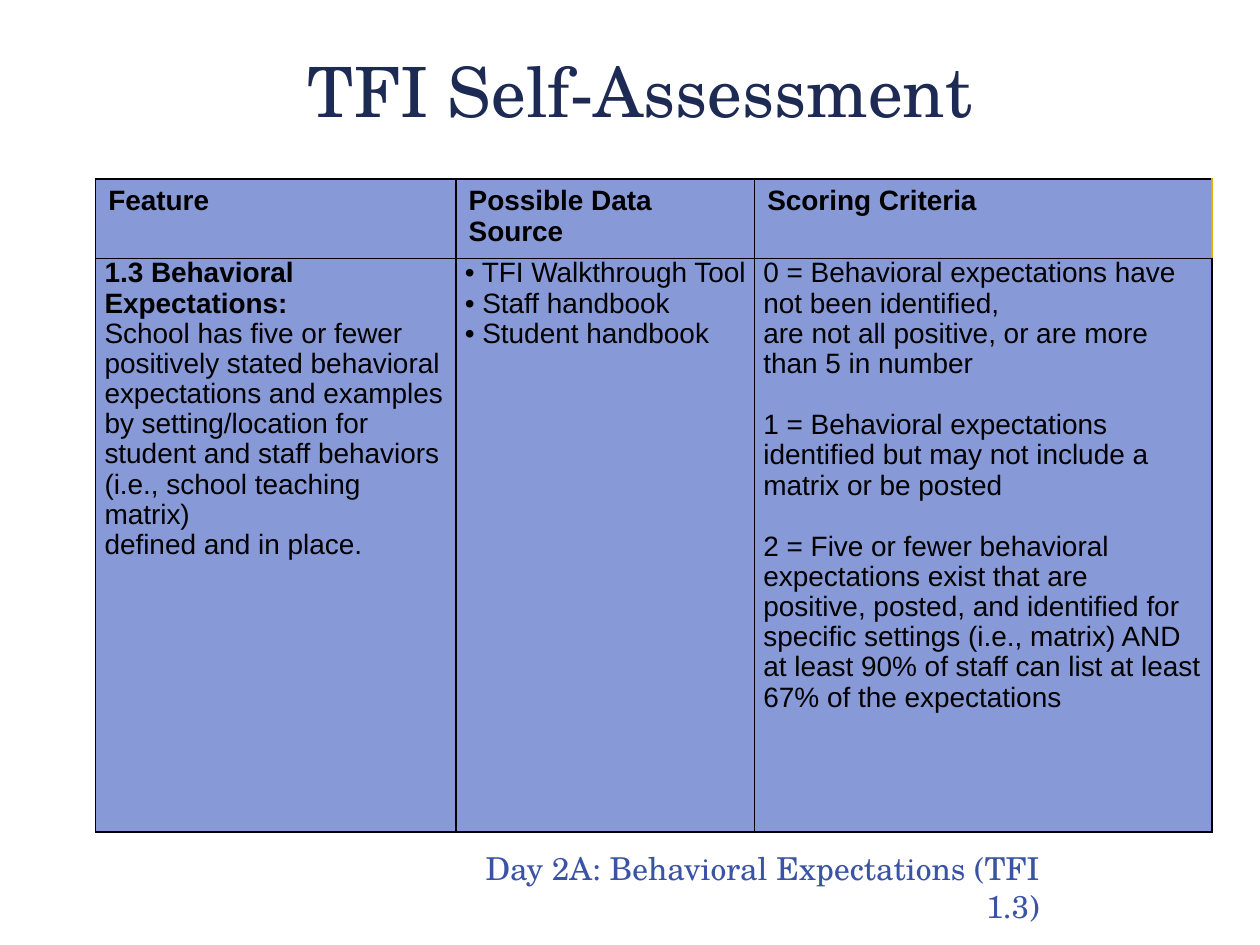
from lxml.etree import SubElement
from pptx import Presentation
from pptx.dml.color import RGBColor
from pptx.enum.text import MSO_ANCHOR, PP_ALIGN
from pptx.oxml.ns import qn
from pptx.util import Inches, Pt

NAVY = RGBColor(0x1D, 0x2A, 0x53)
BLUE = RGBColor(0x3A, 0x53, 0xA5)
PERIWINKLE = RGBColor(0x87, 0x99, 0xD7)
BLACK = RGBColor(0, 0, 0)
GOLD = RGBColor(0xE2, 0xAC, 0x00)
SERIF, SANS = "TeX Gyre Schola", "Arial"

COLUMN_WIDTHS = [2.86, 2.37, 3.63]
ROW_HEIGHTS = [0.57, 4.55]
HEADER_MARGINS = (0.1, 0.05)
BODY_MARGINS = (0.07, 0)
BODY_SPACING = 0.97
SCORE_GAP = Pt(17.8)

HEADINGS = ["Feature", "Possible Data Source", "Scoring Criteria"]
FEATURE = [
    "1.3 Behavioral Expectations:",
    "School has five or fewer positively stated behavioral",
    "expectations and examples by setting/location for",
    "student and staff behaviors (i.e., school teaching matrix)",
    "defined and in place.",
]
SOURCES = ["• TFI Walkthrough Tool", "• Staff handbook", "• Student handbook"]
CRITERIA = [
    "0 = Behavioral expectations have not been identified,",
    "are not all positive, or are more than 5 in number",
    "1 = Behavioral expectations identified but may not include a matrix or be posted",
    "2 = Five or fewer behavioral expectations exist that are",
    "positive, posted, and identified for specific settings (i.e., matrix) AND "
    "at least 90% of staff can list at least 67% of the expectations",
]


def set_all(target, values):
    for name, value in values.items():
        setattr(target, name, value)


def write(para, text, size, face, color, bold=False):
    span = para.add_run()
    span.text = text
    set_all(span.font, {"size": Pt(size), "name": face, "bold": bold})
    span.font.color.rgb = color


def place(shape, box):
    names = ("left", "top", "width", "height")
    set_all(shape, dict(zip(names, map(Inches, box))))


def add_title(page, box):
    title = page.shapes.title
    place(title, box)
    set_all(title.text_frame, {"vertical_anchor": MSO_ANCHOR.MIDDLE, "word_wrap": True})
    para = title.text_frame.paragraphs[0]
    para.alignment = PP_ALIGN.CENTER
    write(para, "TFI Self-Assessment", 39.6, SERIF, NAVY)


def add_footer(page, box):
    frame = page.shapes.add_textbox(*map(Inches, box)).text_frame
    frame.word_wrap = True
    para = frame.paragraphs[0]
    para.alignment = PP_ALIGN.RIGHT
    write(para, "Day 2A: Behavioral Expectations (TFI 1.3)", 18, SERIF, BLUE)


def add_borders(cell, right_color):
    """Draw 1 pt lines on all four sides; call before the cell is filled."""
    properties = cell._tc.get_or_add_tcPr()
    for side, color in zip("LRTB", (BLACK, right_color, BLACK, BLACK)):
        line = SubElement(properties, qn(f"a:ln{side}"), w=str(Pt(1)))
        fill = SubElement(line, qn("a:solidFill"))
        SubElement(fill, qn("a:srgbClr"), val=str(color))


def fill_cell(cell, lines, margins, right_color=BLACK, bold_first=False, spacing=None):
    add_borders(cell, right_color)
    cell.fill.solid()
    cell.fill.fore_color.rgb = PERIWINKLE
    across, down = map(Inches, margins)
    set_all(cell, {"margin_left": across, "margin_right": across,
                   "margin_top": down, "margin_bottom": down})
    frame = cell.text_frame
    for index, text in enumerate(lines):
        para = frame.add_paragraph() if index else frame.paragraphs[0]
        para.line_spacing = spacing
        if index and text.startswith(("1 =", "2 =")):
            para.space_before = SCORE_GAP
        write(para, text, 16, SANS, BLACK, bold_first and index == 0)


def add_criteria_table(page, left, top):
    box = (left, top, sum(COLUMN_WIDTHS), sum(ROW_HEIGHTS))
    table = page.shapes.add_table(2, 3, *map(Inches, box)).table
    for column, width in zip(table.columns, COLUMN_WIDTHS):
        column.width = Inches(width)
    for row, height in zip(table.rows, ROW_HEIGHTS):
        row.height = Inches(height)
    for index, heading in enumerate(HEADINGS):
        edge = GOLD if heading == HEADINGS[-1] else BLACK
        fill_cell(table.cell(0, index), [heading], HEADER_MARGINS, edge, bold_first=True)
    for index, lines in enumerate((FEATURE, SOURCES, CRITERIA)):
        fill_cell(table.cell(1, index), lines, BODY_MARGINS,
                  bold_first=lines is FEATURE, spacing=BODY_SPACING)


def main():
    deck = Presentation()
    set_all(deck, {"slide_width": Inches(10), "slide_height": Inches(7.5)})
    page = deck.slides.add_slide(deck.slide_layouts[5])
    add_footer(page, (3.63, 6.69, 4.72, 0.4))
    add_criteria_table(page, 0.76, 1.42)
    add_title(page, (1, 0.32, 8.16, 0.79))
    deck.save("out.pptx")


if __name__ == "__main__":
    main()
